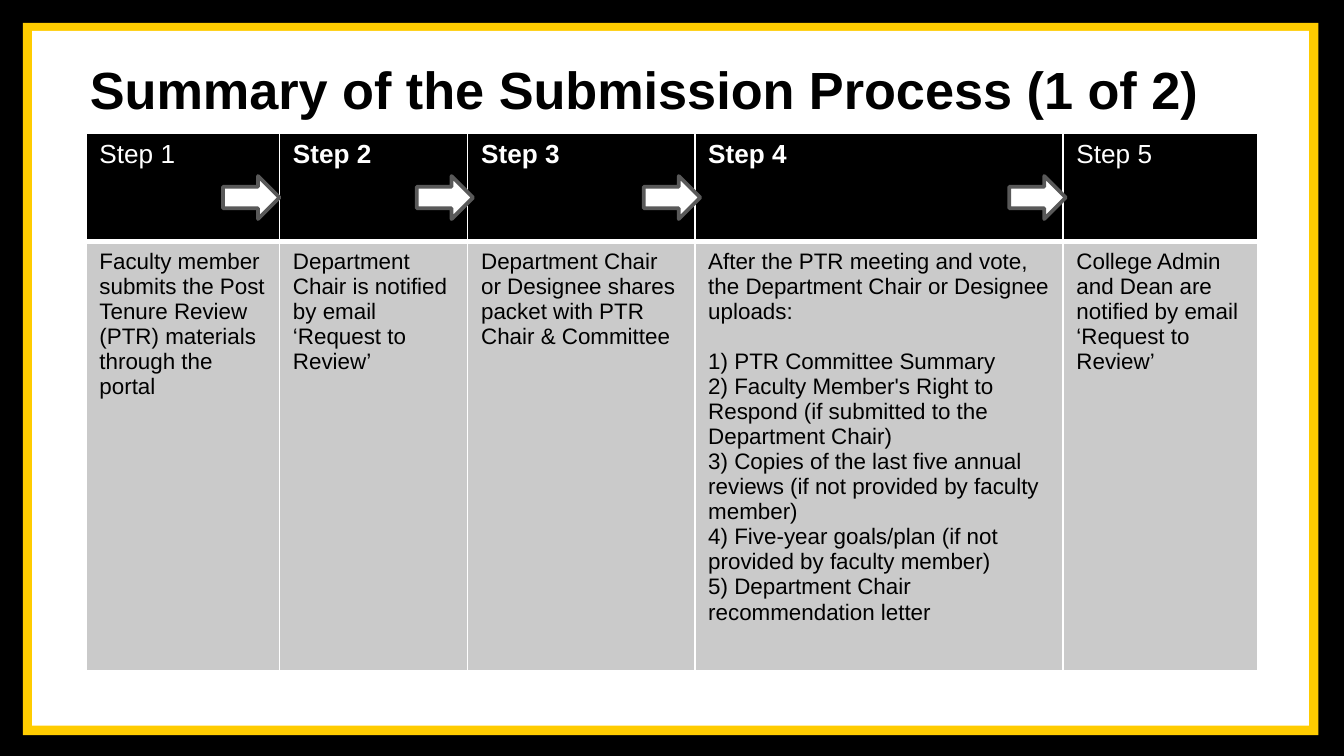
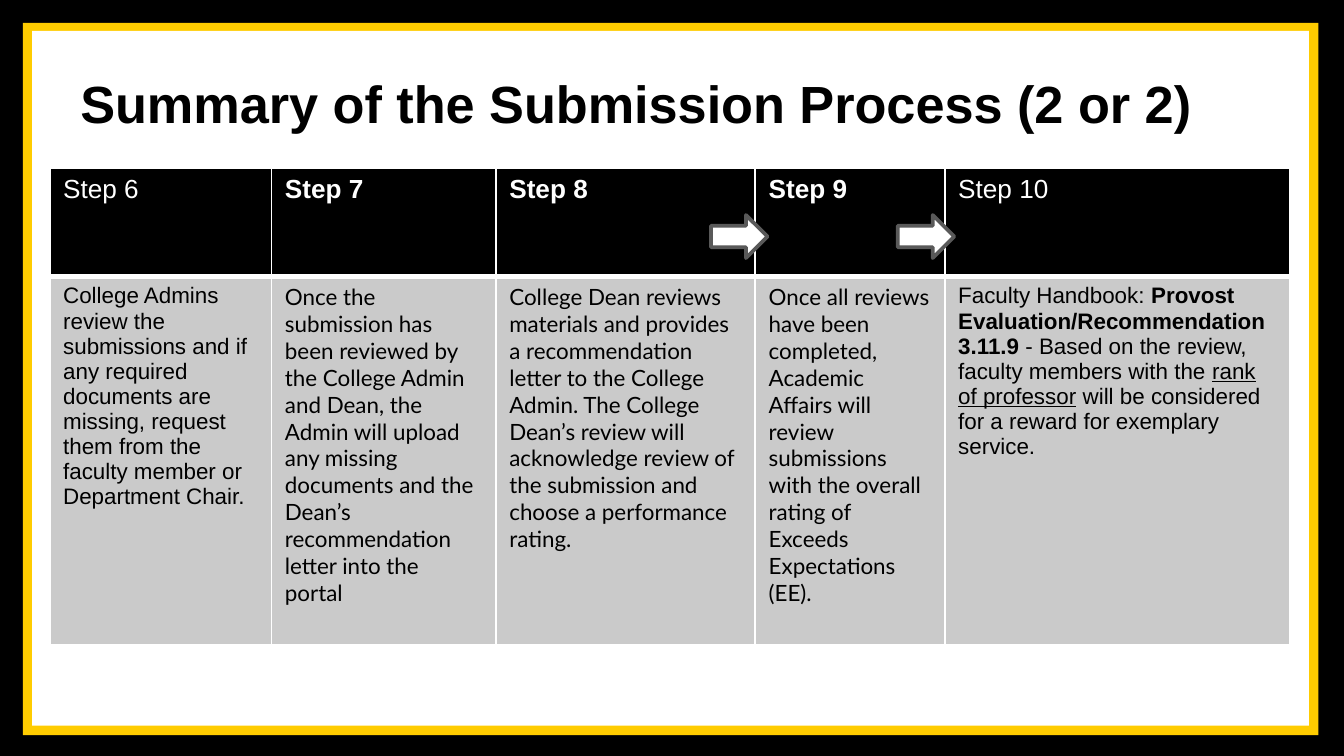
import dataclasses
import pptx
import pptx.dml.color
import pptx.enum.shapes
import pptx.enum.text
import pptx.oxml
import pptx.oxml.ns
import pptx.util
from pptx.util import Inches

COLORS = {
    "black": "000000",
    "gold": "FFCC00",
    "white": "FFFFFF",
    "gray": "CACACA",
    "outline": "595959",
}
PAGE_WIDTH = 10
PAGE_HEIGHT = PAGE_WIDTH * 9 / 16
FRAME = (
    (0, 0, PAGE_WIDTH, PAGE_HEIGHT, "black"),
    (0.17, 0.17, 9.64, 5.3, "gold"),
    (0.24, 0.23, 9.5, 5.17, "white"),
)
SHAPES = pptx.enum.shapes.MSO_SHAPE
HEADER_HEIGHT = 0.81
ARROW_SIZE = (0.42, 0.32)


@dataclasses.dataclass(frozen=True)
class Span:
    text: str
    size: float = 12
    font: str = "Arial"
    color: str = "black"
    bold: bool = False
    underline: bool = False


@dataclasses.dataclass(frozen=True)
class Para:
    spans: tuple[Span, ...]
    before: float = 0


@dataclasses.dataclass(frozen=True)
class Step:
    number: int
    width: float
    paras: tuple[Para, ...]


@dataclasses.dataclass(frozen=True)
class ProcessPage:
    title: str
    title_at: tuple[float, float]
    table_at: tuple[float, float]
    body_height: float
    steps: tuple[Step, ...]
    arrow_lefts: tuple[float, ...]
    arrow_top: float


def plain(*lines: str, font: str = "Arial") -> tuple[Para, ...]:
    return tuple(Para((Span(line, font=font),)) for line in lines)


PAGES = (
    ProcessPage(
        "Summary of the Submission Process (1 of 2)",
        (0.43, -0.11),
        (0.64, 0.99),
        3.19,
        (
            Step(1, 1.44, plain("Faculty member submits the Post Tenure Review (PTR) materials through the portal")),
            Step(2, 1.4, plain("Department Chair is notified by email ‘Request to Review’")),
            Step(3, 1.69, plain("Department Chair or Designee shares packet with PTR Chair & Committee")),
            Step(4, 2.74, (
                *plain("After the PTR meeting and vote, the Department Chair or Designee uploads:"),
                Para((Span("1) PTR Committee Summary"),), before=13.4),
                *plain(
                    "2) Faculty Member's Right to Respond (if submitted to the Department Chair)",
                    "3) Copies of the last five annual reviews (if not provided by faculty member)",
                    "4) Five-year goals/plan (if not provided by faculty member)",
                    "5) Department Chair recommendation letter",
                ),
            )),
            Step(5, 1.45, plain("College Admin and Dean are notified by email ‘Request to Review’")),
        ),
        (1.66, 3.1, 4.79, 7.51),
        1.31,
    ),
    ProcessPage(
        "Summary of the Submission Process (2 or 2)",
        (0.37, 0),
        (0.37, 1.25),
        2.74,
        (
            Step(6, 1.65, plain(
                "College Admins review the submissions and if any required documents are missing, "
                "request them from the faculty member or Department Chair.")),
            Step(7, 1.67, plain(
                "Once the submission has been reviewed by the College Admin and Dean, the Admin will upload "
                "any missing documents and the Dean’s recommendation letter into the portal", font="Lato")),
            Step(8, 1.93, plain(
                "College Dean reviews materials and provides a recommendation letter to the College Admin. "
                "The College Dean’s review will acknowledge review of the submission and choose a "
                "performance rating.", font="Lato")),
            Step(9, 1.41, plain(
                "Once all reviews have been completed, Academic Affairs will review submissions with the "
                "overall rating of Exceeds Expectations (EE).", font="Lato")),
            Step(10, 2.57, (Para((
                Span("Faculty Handbook: "),
                Span("Provost Evaluation/Recommendation 3.11.9 ", bold=True),
                Span("- Based on the review, faculty members with the "),
                Span("rank of professor", underline=True),
                Span(" will be considered for a reward for exemplary service."),
            )),)),
        ),
        (5.29, 6.68),
        1.6,
    ),
)


def rgb(name: str) -> pptx.dml.color.RGBColor:
    return pptx.dml.color.RGBColor.from_string(COLORS[name])


def write(frame: pptx.text.text.TextFrame, paras: tuple[Para, ...]) -> None:
    frame.word_wrap = True
    for index, para in enumerate(paras):
        paragraph = frame.add_paragraph() if index else frame.paragraphs[0]
        if para.before:
            paragraph.space_before = pptx.util.Pt(para.before)
        for span in para.spans:
            run = paragraph.add_run()
            run.text = span.text
            run.font.size = pptx.util.Pt(span.size)
            run.font.name = span.font
            run.font.bold = span.bold
            run.font.underline = span.underline
            run.font.color.rgb = rgb(span.color)


def add_filled(page: pptx.slide.Slide, kind: SHAPES, left: float, top: float,
               width: float, height: float, color: str) -> pptx.shapes.autoshape.Shape:
    shape = page.shapes.add_shape(kind, Inches(left), Inches(top), Inches(width), Inches(height))
    shape.shadow.inherit = False
    shape.fill.solid()
    shape.fill.fore_color.rgb = rgb(color)
    shape.line.fill.background()
    return shape


def add_title(page: pptx.slide.Slide, text: str, left: float, top: float) -> None:
    box = page.shapes.add_textbox(Inches(left), Inches(top), Inches(8.72), Inches(1.1))
    frame = box.text_frame
    frame.margin_left = frame.margin_right = frame.margin_top = frame.margin_bottom = Inches(0.1)
    frame.vertical_anchor = pptx.enum.text.MSO_ANCHOR.BOTTOM
    write(frame, (Para((Span(text, size=28, bold=True),)),))
    frame.paragraphs[0].alignment = pptx.enum.text.PP_ALIGN.CENTER


def style_cell(cell: pptx.table._Cell, color: str, top: float, bottom: float) -> None:
    properties = cell._tc.get_or_add_tcPr()
    for side, points in (("L", 1), ("R", 1), ("T", top), ("B", bottom)):
        properties.append(pptx.oxml.parse_xml(
            f'<a:ln{side} {pptx.oxml.ns.nsdecls("a")} w="{pptx.util.Pt(points)}"><a:solidFill>'
            f'<a:srgbClr val="{COLORS["white"]}"/></a:solidFill></a:ln{side}>'))
    cell.fill.solid()
    cell.fill.fore_color.rgb = rgb(color)


def add_steps(page: pptx.slide.Slide, content: ProcessPage) -> None:
    steps = content.steps
    left, top = content.table_at
    width = sum(step.width for step in steps)
    table = page.shapes.add_table(
        2, len(steps), Inches(left), Inches(top), Inches(width),
        Inches(HEADER_HEIGHT + content.body_height)).table
    table.rows[0].height = Inches(HEADER_HEIGHT)
    table.rows[1].height = Inches(content.body_height)
    for index, step in enumerate(steps):
        table.columns[index].width = Inches(step.width)
        header, body = table.cell(0, index), table.cell(1, index)
        style_cell(header, "black", 1, 3)
        style_cell(body, "gray", 3, 1)
        inner = 0 < index < len(steps) - 1
        label = Span(f"Step {step.number}", size=14, color="white", bold=inner)
        write(header.text_frame, (Para((label,)),))
        write(body.text_frame, step.paras)


def add_arrow(page: pptx.slide.Slide, left: float, top: float) -> None:
    arrow = add_filled(page, SHAPES.RIGHT_ARROW, left, top, *ARROW_SIZE, "white")
    arrow.line.color.rgb = rgb("outline")
    arrow.line.width = pptx.util.Pt(2)
    outline = arrow._element.spPr.find(pptx.oxml.ns.qn("a:ln"))
    outline.append(pptx.oxml.parse_xml(f'<a:round {pptx.oxml.ns.nsdecls("a")}/>'))


def add_page(deck: pptx.presentation.Presentation, content: ProcessPage) -> None:
    page = deck.slides.add_slide(deck.slide_layouts[6])
    for band in FRAME:
        add_filled(page, SHAPES.RECTANGLE, *band)
    add_title(page, content.title, *content.title_at)
    add_steps(page, content)
    for left in content.arrow_lefts:
        add_arrow(page, left, content.arrow_top)


def main() -> None:
    deck = pptx.Presentation()
    deck.slide_width = Inches(PAGE_WIDTH)
    deck.slide_height = Inches(PAGE_HEIGHT)
    for content in PAGES:
        add_page(deck, content)
    deck.save("out.pptx")


if __name__ == "__main__":
    main()
